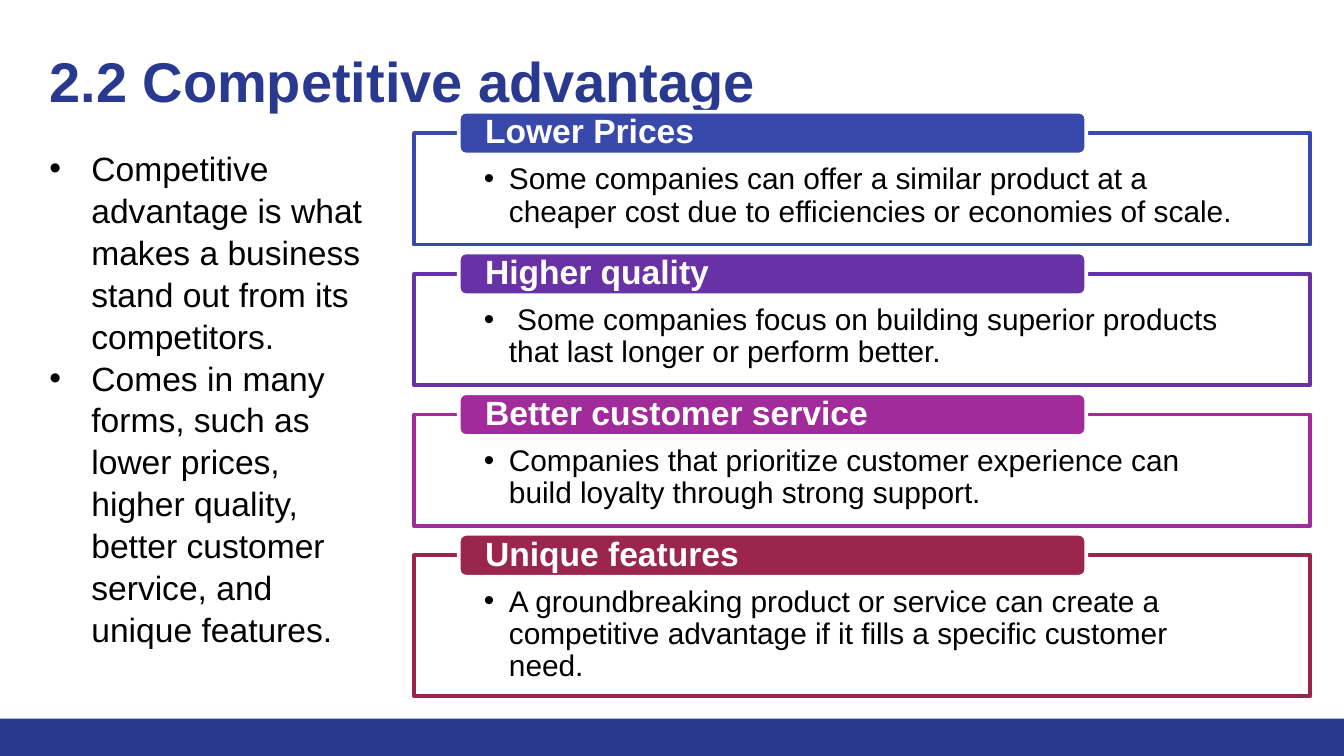
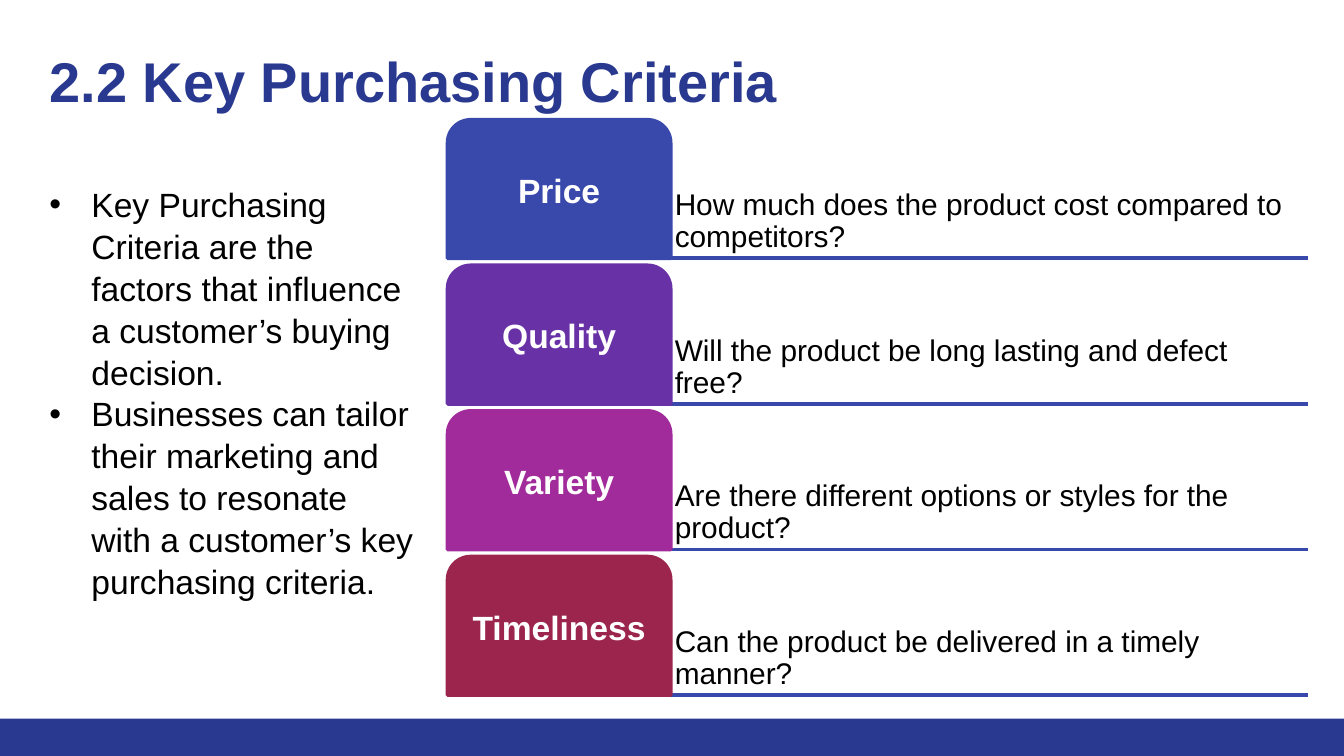
from dataclasses import dataclass

from lxml import etree
from pptx import Presentation
from pptx import util as u
from pptx.dml.color import RGBColor
from pptx.enum import shapes, text
from pptx.oxml import ns

Pt = u.Pt
Box = tuple[float, float, float, float]  # left, top, width, height in points


@dataclass(frozen=True)
class Theme:
    font: str = "Arial"
    navy: str = "2A3990"
    white: str = "FFFFFF"
    black: str = "000000"
    accents: tuple[str, ...] = ("3949AB", "6832A6", "A12B9A", "9C254D")
    title_size: float = 30
    body_size: float = 18
    detail_size: float = 16
    line_width: float = 2


@dataclass(frozen=True)
class Advantage:
    heading: str
    detail: str
    height: float = 59.8


@dataclass(frozen=True)
class Criterion:
    heading: str
    question: str


THEME = Theme()

ADVANTAGES = (
    Advantage("Lower Prices",
              "Some companies can offer a similar product at a cheaper cost "
              "due to efficiencies or economies of scale."),
    Advantage("Higher quality",
              " Some companies focus on building superior products "
              "that last longer or perform better."),
    Advantage("Better customer service",
              "Companies that prioritize customer experience can build loyalty "
              "through strong support."),
    Advantage("Unique features",
              "A groundbreaking product or service can create a competitive "
              "advantage if it fills a specific customer need.", 75.6),
)

CRITERIA = (
    Criterion("Price", "How much does the product cost compared to competitors?"),
    Criterion("Quality", "Will the product be long lasting and defect free?"),
    Criterion("Variety", "Are there different options or styles for the product?"),
    Criterion("Timeliness", "Can the product be delivered in a timely manner?"),
)


# Text and shape helpers
def add_bullet(paragraph, indent: float) -> None:
    properties = paragraph._p.get_or_add_pPr()
    properties.set("marL", str(Pt(indent)))
    properties.set("indent", str(-Pt(indent)))
    colour = etree.SubElement(properties, ns.qn("a:buClr"))
    etree.SubElement(colour, ns.qn("a:srgbClr"), val=THEME.black)
    etree.SubElement(properties, ns.qn("a:buFont"), typeface=THEME.font)
    etree.SubElement(properties, ns.qn("a:buChar"), char="•")


def write(holder, *paragraphs: str, size: float = THEME.body_size,
          colour: str = THEME.black, bold: bool = False,
          align=text.PP_ALIGN.LEFT, anchor=text.MSO_ANCHOR.TOP,
          insets: Box = (7.2, 3.6, 7.2, 3.6), spacing: float = 0.9,
          bullet_indent: float = 0) -> None:
    frame = holder.text_frame
    frame.word_wrap = True
    frame.vertical_anchor = anchor
    (frame.margin_left, frame.margin_top,
     frame.margin_right, frame.margin_bottom) = map(Pt, insets)
    for index, content in enumerate(paragraphs):
        paragraph = frame.add_paragraph() if index else frame.paragraphs[0]
        paragraph.alignment = align
        paragraph.line_spacing = spacing
        if bullet_indent:
            add_bullet(paragraph, bullet_indent)
        run = paragraph.add_run()
        run.text = content
        run.font.name = THEME.font
        run.font.size = Pt(size)
        run.font.bold = bold
        run.font.color.rgb = RGBColor.from_string(colour)


def add_text(slide, box: Box, *paragraphs: str, **text_format) -> None:
    write(slide.shapes.add_textbox(*map(Pt, box)), *paragraphs, **text_format)


def add_block(slide, preset, box: Box, fill: str, outline: str | None = None):
    block = slide.shapes.add_shape(preset, *map(Pt, box))
    block.shadow.inherit = False
    block.fill.solid()
    block.fill.fore_color.rgb = RGBColor.from_string(fill)
    if outline:
        block.line.color.rgb = RGBColor.from_string(outline)
        block.line.width = Pt(THEME.line_width)
    else:
        block.line.fill.background()
    return block


def add_rule(slide, left: float, right: float, y: float) -> None:
    rule = slide.shapes.add_connector(
        shapes.MSO_CONNECTOR.STRAIGHT, Pt(left), Pt(y), Pt(right), Pt(y))
    rule.line.color.rgb = RGBColor.from_string(THEME.accents[0])
    rule.line.width = Pt(THEME.line_width)
    etree.SubElement(rule._element.spPr, ns.qn("a:effectLst"))


# Shared slide frame: footer band, title and bullet column
def add_base_slide(deck, title: str, points: tuple[str, ...], points_box: Box):
    slide = deck.slides.add_slide(deck.slide_layouts[6])
    add_block(slide, shapes.MSO_SHAPE.RECTANGLE, (0, 385, 720, 20), THEME.navy)
    add_text(slide, (19.4, 14.4, 662.4, 64), title, size=THEME.title_size,
             colour=THEME.navy, bold=True, spacing=1,
             insets=(7.2, 10.4, 7.2, 7.2))
    add_text(slide, points_box, *points, spacing=1.04, bullet_indent=22.5,
             anchor=text.MSO_ANCHOR.MIDDLE)
    return slide


# Slide 1: framed list of advantages
def add_advantages(slide) -> None:
    left, first_top, step = 221.8, 71.3, 75.4
    for index, (advantage, accent) in enumerate(zip(ADVANTAGES, THEME.accents)):
        top = first_top + index * step
        frame = add_block(slide, shapes.MSO_SHAPE.RECTANGLE,
                          (left, top, 480.2, advantage.height),
                          THEME.white, accent)
        write(frame, advantage.detail, size=THEME.detail_size,
              insets=(37.4, 16.6, 37.4, 8.6), bullet_indent=13.5)
        heading = add_block(slide, shapes.MSO_SHAPE.ROUNDED_RECTANGLE,
                            (left + 24, top - 11.5, 336.2, 23),
                            accent, THEME.white)
        write(heading, advantage.heading, colour=THEME.white, bold=True,
              anchor=text.MSO_ANCHOR.MIDDLE, insets=(13, 0, 13, 0))


# Slide 2: tabs with questions above rules
def add_criteria(slide) -> None:
    left, middle, right = 239.8, 359.3, 700.6
    first_top, step, height = 64.2, 78, 74.2
    tops = [first_top + index * step for index in range(len(CRITERIA))]
    for top in tops:
        add_rule(slide, left, right, top + height)
    for criterion, accent, top in zip(CRITERIA, THEME.accents, tops):
        add_text(slide, (middle, top, right - middle, height),
                 criterion.question, size=THEME.detail_size,
                 anchor=text.MSO_ANCHOR.BOTTOM, insets=(2.2, 2.2, 2.2, 2.2))
        tab = add_block(slide, shapes.MSO_SHAPE.ROUND_2_SAME_RECTANGLE,
                        (left, top, middle - left, height), accent, accent)
        write(tab, criterion.heading, colour=THEME.white, bold=True,
              align=text.PP_ALIGN.CENTER, anchor=text.MSO_ANCHOR.MIDDLE,
              insets=(2.9, 2.9, 2.9, 2.9))


def main() -> None:
    deck = Presentation()
    deck.slide_width, deck.slide_height = Pt(720), Pt(405)
    add_advantages(add_base_slide(
        deck, "2.2 Competitive advantage",
        ("Competitive advantage is what makes a business stand out from its "
         "competitors.",
         "Comes in many forms, such as lower prices, higher quality, better "
         "customer service, and unique features."),
        (19.4, 78.5, 192.2, 269.3)))
    add_criteria(add_base_slide(
        deck, "2.2 Key Purchasing Criteria",
        ("Key Purchasing Criteria are the factors that influence a customer’s "
         "buying decision.",
         "Businesses can tailor their marketing and sales to resonate with a "
         "customer’s key purchasing criteria."),
        (19.4, 97.2, 210.2, 225.4)))
    deck.save("out.pptx")


if __name__ == "__main__":
    main()
